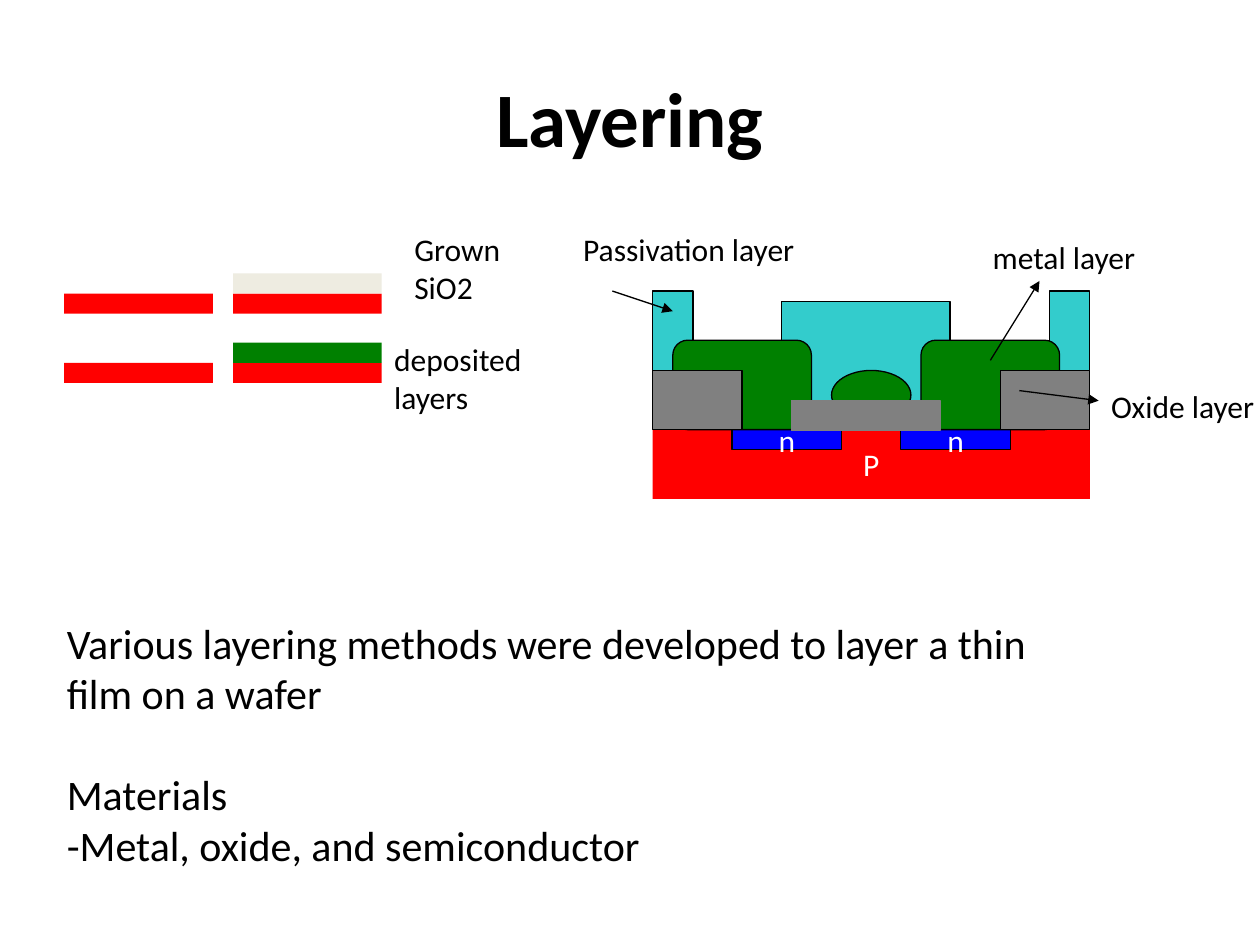
from dataclasses import dataclass

from lxml import etree
from pptx import Presentation
from pptx.dml.color import RGBColor
from pptx.enum.shapes import MSO_CONNECTOR, MSO_SHAPE
from pptx.enum.text import MSO_ANCHOR, MSO_AUTO_SIZE, PP_ALIGN
from pptx.oxml.ns import qn
from pptx.util import Inches, Pt

RECTANGLE = MSO_SHAPE.RECTANGLE
ROUNDED = MSO_SHAPE.ROUNDED_RECTANGLE
OVAL = MSO_SHAPE.OVAL
STRAIGHT = MSO_CONNECTOR.STRAIGHT
MIDDLE, TOP = MSO_ANCHOR.MIDDLE, MSO_ANCHOR.TOP
CENTER, LEFT = PP_ALIGN.CENTER, PP_ALIGN.LEFT
FIT_SHAPE, NO_FIT = MSO_AUTO_SIZE.SHAPE_TO_FIT_TEXT, MSO_AUTO_SIZE.NONE


@dataclass(frozen=True)
class Theme:
    font: str = "Calibri"
    title_size: int = 44
    body_size: int = 24
    label_size: int = 18
    line_width: float = 0.75
    black: str = "000000"
    white: str = "FFFFFF"
    wafer: str = "FF0000"
    doped: str = "0000FF"
    metal: str = "008000"
    oxide: str = "808080"
    passivation: str = "33CCCC"
    grown: str = "EEECE1"


THEME = Theme()


@dataclass(frozen=True)
class Layer:
    left: float
    top: float
    width: float
    height: float
    fill: str
    line: str | None = THEME.black
    form: MSO_SHAPE = RECTANGLE
    text: str = ""


@dataclass(frozen=True)
class Label:
    left: float
    top: float
    width: float
    height: float
    lines: tuple[str, ...]


@dataclass(frozen=True)
class Arrow:
    start: tuple[float, float]
    end: tuple[float, float]


def add_run(paragraph, text: str, size: int, color: str = THEME.black, bold: bool = False) -> None:
    run = paragraph.add_run()
    run.text = text
    run.font.name = THEME.font
    run.font.size = Pt(size)
    run.font.bold = bold
    run.font.color.rgb = RGBColor.from_string(color)


def place(shape, left: float, top: float, width: float, height: float) -> None:
    shape.left, shape.top = Inches(left), Inches(top)
    shape.width, shape.height = Inches(width), Inches(height)


def add_layer(shapes, layer: Layer) -> None:
    shape = shapes.add_shape(layer.form, Inches(layer.left), Inches(layer.top),
                             Inches(layer.width), Inches(layer.height))
    shape.shadow.inherit = False
    shape.fill.solid()
    shape.fill.fore_color.rgb = RGBColor.from_string(layer.fill)
    if layer.line:
        shape.line.color.rgb = RGBColor.from_string(layer.line)
        shape.line.width = Pt(THEME.line_width)
    else:
        shape.line.fill.background()
    if layer.text:
        frame = shape.text_frame
        frame.word_wrap = False
        frame.vertical_anchor = MIDDLE
        frame.paragraphs[0].alignment = CENTER
        add_run(frame.paragraphs[0], layer.text, THEME.label_size, THEME.white)


def add_label(shapes, label: Label) -> None:
    box = shapes.add_textbox(Inches(label.left), Inches(label.top),
                             Inches(label.width), Inches(label.height))
    frame = box.text_frame
    frame.word_wrap = False
    frame.auto_size = FIT_SHAPE
    for index, line in enumerate(label.lines):
        paragraph = frame.add_paragraph() if index else frame.paragraphs[0]
        add_run(paragraph, line, THEME.label_size)


def add_arrow(shapes, arrow: Arrow) -> None:
    connector = shapes.add_connector(STRAIGHT, *map(Inches, arrow.start + arrow.end))
    connector.line.color.rgb = RGBColor.from_string(THEME.black)
    connector.line.width = Pt(THEME.line_width)
    properties = connector.element.spPr
    etree.SubElement(properties.find(qn("a:ln")), qn("a:tailEnd"), type="triangle")
    etree.SubElement(properties, qn("a:effectLst"))


def add_body(body, lines: list[tuple[str, int]]) -> None:
    """Each line is its text and the space before it in points."""
    frame = body.text_frame
    frame.word_wrap = True
    frame.auto_size = NO_FIT
    frame.vertical_anchor = TOP
    for index, (text, space) in enumerate(lines):
        paragraph = frame.add_paragraph() if index else frame.paragraphs[0]
        properties = paragraph._p.get_or_add_pPr()
        properties.set("marL", "0")
        properties.set("indent", "0")
        etree.SubElement(properties, qn("a:buNone"))
        paragraph.alignment = LEFT
        paragraph.space_before = Pt(space)
        add_run(paragraph, text, THEME.body_size)


# Plain wafers on the left, coated wafers on the right
FILM_HEIGHT, FILM_WIDTH = 0.16, 1.18
BARE_LEFT, COATED_LEFT = 0.51, 1.85
WAFER_ROWS = [(2.33, THEME.grown), (2.88, THEME.metal)]
WAFER_LABELS = [
    Label(3.19, 1.78, 0.94, 0.7, ("Grown", "SiO2")),
    Label(3.03, 2.65, 1.35, 0.7, ("deposited", "layers")),
]

# Cross section of the device, from back to front
SURFACE = 3.41
CROSS_SECTION = [
    Layer(5.18, SURFACE, 3.47, 0.55, THEME.wafer, None, text="P"),
    *[Layer(left, SURFACE, 0.87, 0.16, THEME.doped, text="n") for left in (5.81, 7.15)],
    *[Layer(left, 2.31, 0.32, 0.63, THEME.passivation) for left in (5.18, 8.33)],
    Layer(6.2, 2.39, 1.34, 0.79, THEME.passivation),
    *[Layer(left, 2.7, 1.1, 0.71, THEME.metal, form=ROUNDED) for left in (5.34, 7.31)],
    Layer(6.6, 2.94, 0.63, 0.39, THEME.metal, form=OVAL),
    Layer(6.28, 3.18, 1.18, 0.24, THEME.oxide, THEME.oxide),
    *[Layer(left, 2.94, 0.71, 0.47, THEME.oxide) for left in (5.18, 7.94)],
]
SECTION_LABELS = [
    Label(4.53, 1.78, 2.09, 0.4, ("Passivation layer",)),
    Label(7.78, 1.84, 1.42, 0.4, ("metal layer",)),
    Label(8.72, 3.02, 1.47, 0.4, ("Oxide layer",)),
]
SECTION_ARROWS = [
    Arrow((4.86, 2.31), (5.34, 2.47)),
    Arrow((7.86, 2.86), (8.25, 2.23)),
    Arrow((8.09, 3.1), (8.72, 3.18)),
]
BODY_LINES = [
    ("Various layering methods were developed to layer a thin film on a wafer", 0),
    ("Materials", 29),
    ("-Metal, oxide, and semiconductor", 0),
]


def main() -> None:
    presentation = Presentation()
    presentation.slide_width, presentation.slide_height = Inches(10), Inches(7.5)
    slide = presentation.slides.add_slide(presentation.slide_layouts[1])

    # Title and body
    title, body = slide.placeholders
    place(title, 0.5, 0.3, 9, 1.25)
    title.text_frame.vertical_anchor = MIDDLE
    title.text_frame.paragraphs[0].alignment = CENTER
    add_run(title.text_frame.paragraphs[0], "Layering", THEME.title_size, bold=True)
    place(body, 0.43, 4.85, 8.35, 3.3)
    add_body(body, BODY_LINES)

    # Wafers before and after layering
    for top, film in WAFER_ROWS:
        for left in (BARE_LEFT, COATED_LEFT):
            add_layer(slide.shapes, Layer(left, top, FILM_WIDTH, FILM_HEIGHT, THEME.wafer, None))
        add_layer(slide.shapes, Layer(COATED_LEFT, top - FILM_HEIGHT, FILM_WIDTH, FILM_HEIGHT, film, None))
    for label in WAFER_LABELS:
        add_label(slide.shapes, label)

    # Device cross section
    section = slide.shapes.add_group_shape().shapes
    for layer in CROSS_SECTION:
        add_layer(section, layer)
    for label in SECTION_LABELS:
        add_label(section, label)
    for arrow in SECTION_ARROWS:
        add_arrow(section, arrow)

    presentation.save("out.pptx")


if __name__ == "__main__":
    main()
